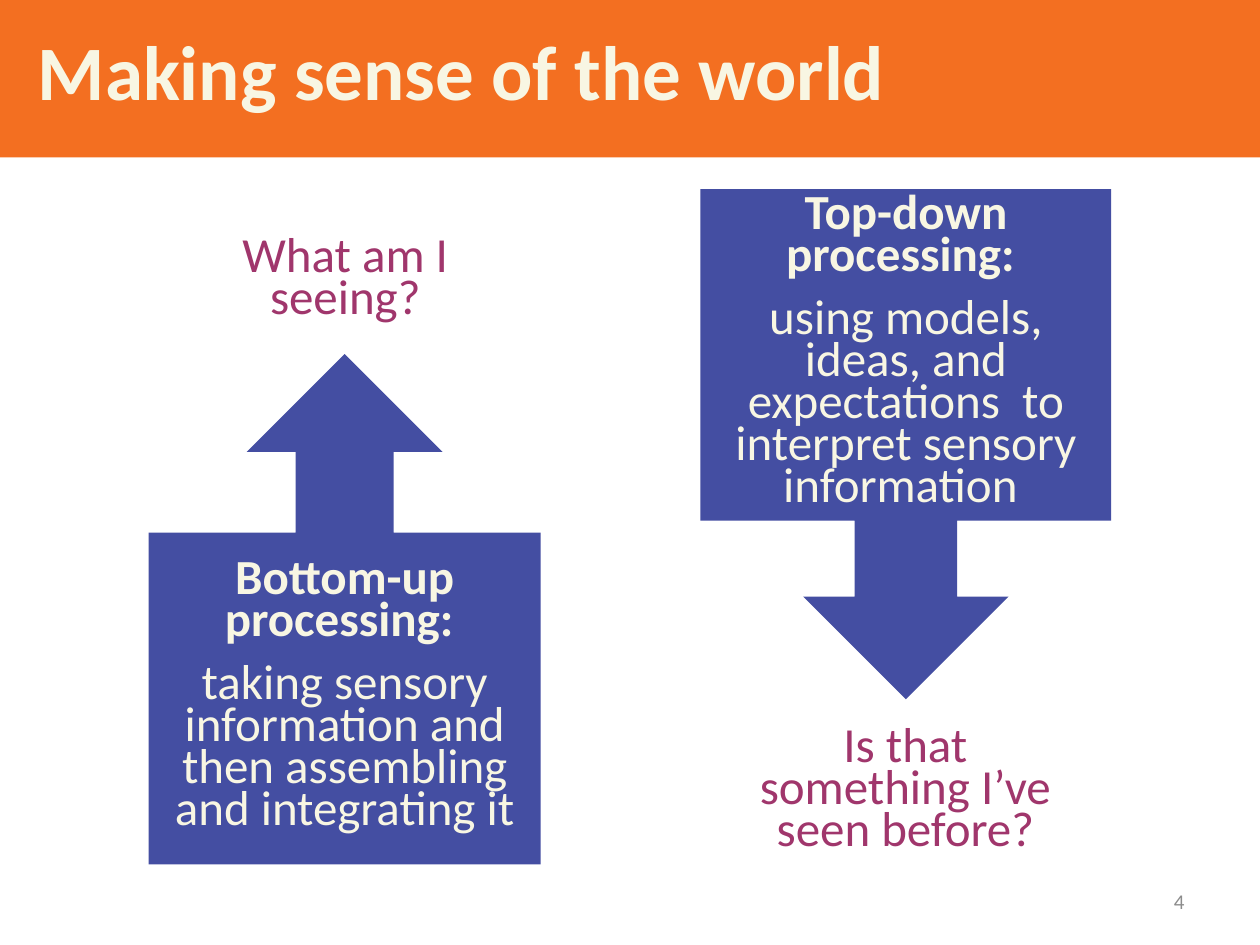
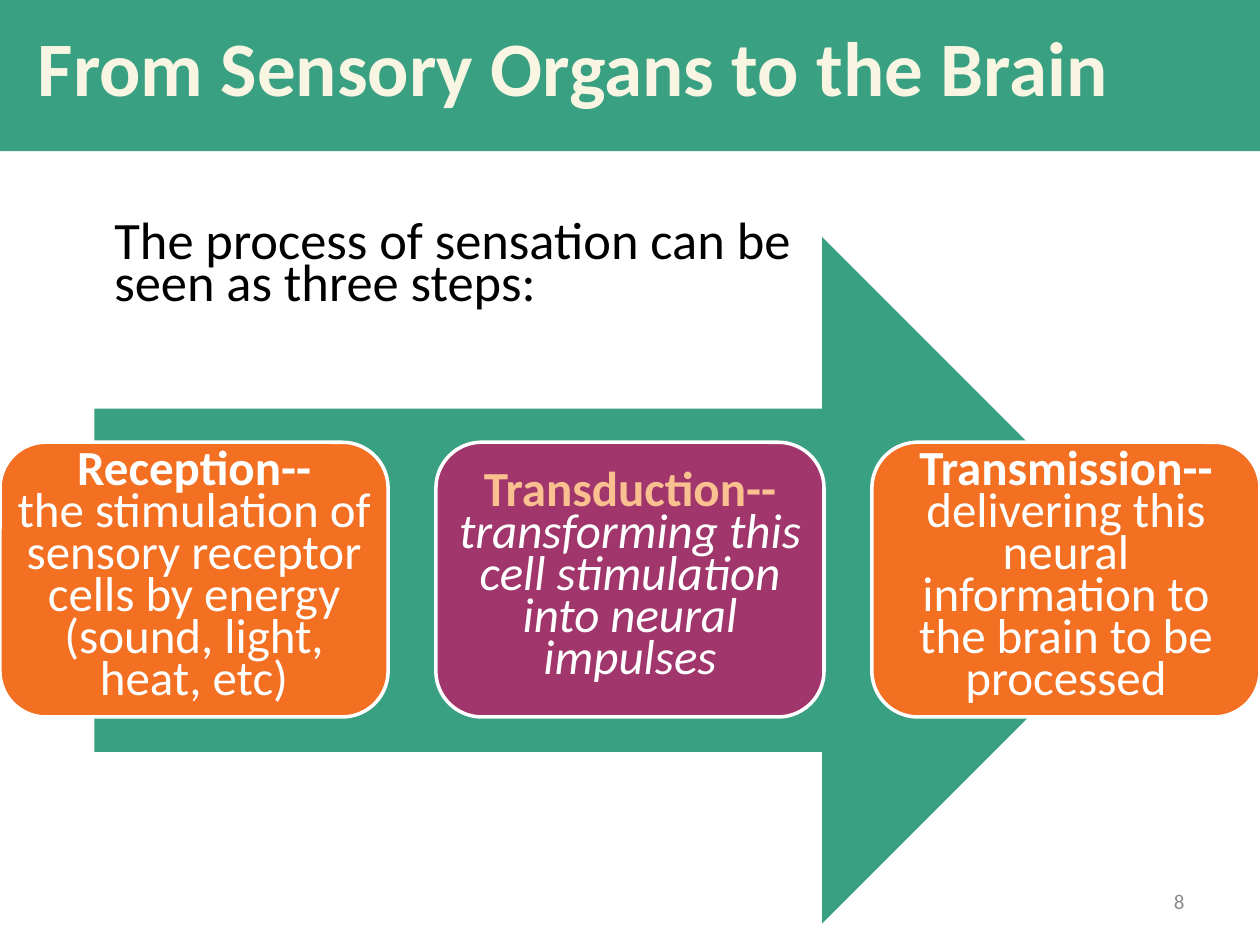
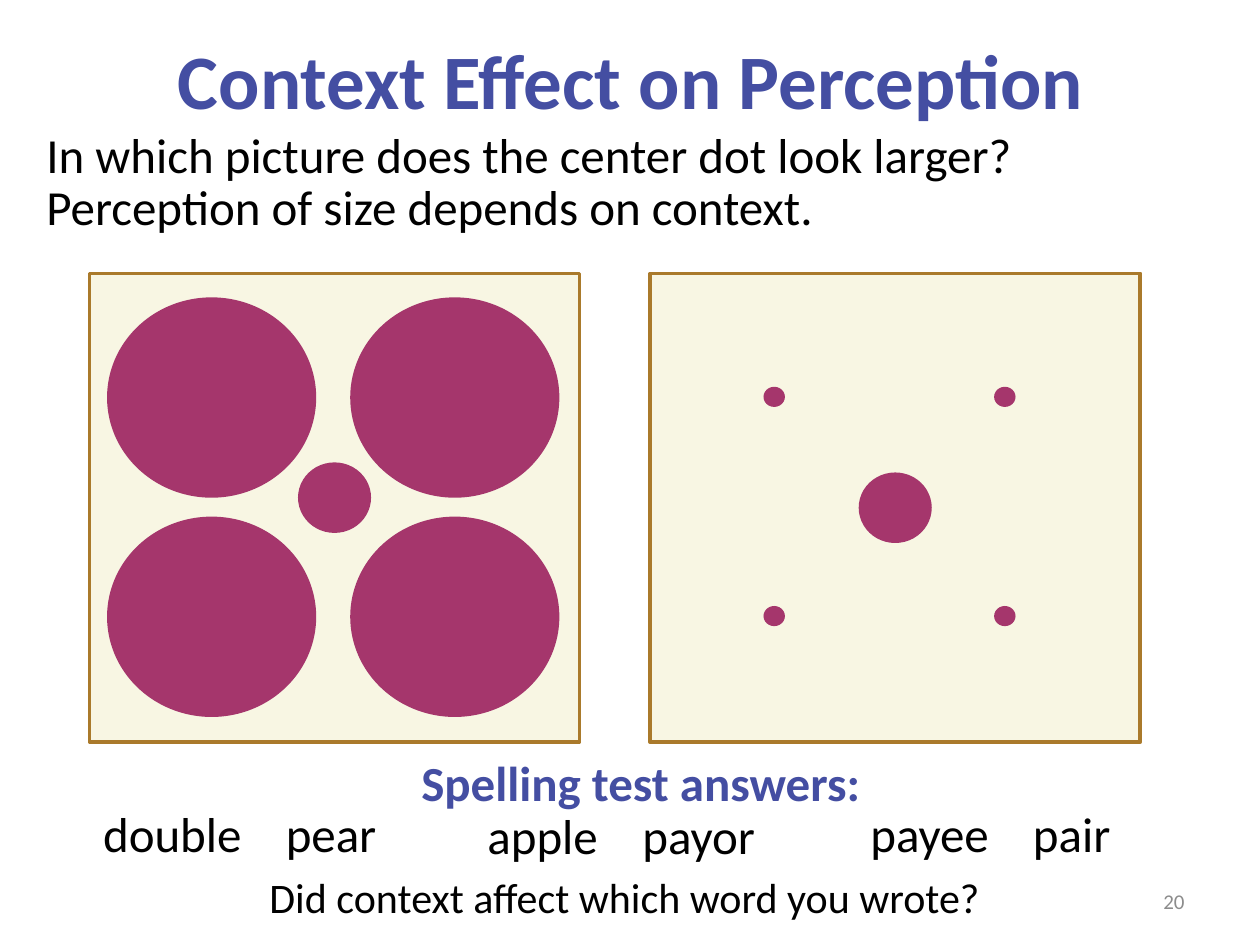
from dataclasses import dataclass, field
from itertools import product
from typing import NamedTuple, Optional

from lxml import etree
from pptx import Presentation
from pptx.dml.color import RGBColor
from pptx.enum import shapes, text
from pptx.oxml import ns
from pptx.util import Inches, Pt

FONT = "Calibri"
COLORS = {
    "cream": "F8F6E3",
    "white": "FFFFFF",
    "black": "000000",
    "orange": "F36F21",
    "green": "3AA082",
    "blue": "444EA2",
    "plum": "A0366C",
    "dot": "A5366C",
    "peach": "FAC090",
    "frame": "AA7A2B",
    "gray": "8C8C8C",
}
SHAPE = shapes.MSO_SHAPE
ALIGN = text.PP_ALIGN
ANCHOR = text.MSO_ANCHOR
TITLE_ONLY = 5

TIGHT = {"line_spacing": Pt(24)}
CENTERED = {**TIGHT, "alignment": ALIGN.CENTER}
SPACED = {**CENTERED, "space_after": Pt(12)}
BODY = {**TIGHT, "space_before": Pt(5.6)}


class Box(NamedTuple):
    left: float
    top: float
    width: float
    height: float


class Run(NamedTuple):
    text: str
    color: str = "black"
    size: float = 28
    bold: bool = False
    italic: bool = False


Paragraphs = list[list[Run]]


@dataclass
class Title:
    text: str
    box: Box
    color: str = "cream"
    band: Optional[str] = None
    style: dict = field(default_factory=dict)


@dataclass
class Callout:
    kind: SHAPE
    box: Box
    heading: str
    body: str
    question: str
    question_box: Box


@dataclass
class Step:
    fill: str
    paragraphs: Paragraphs


@dataclass
class DotPanel:
    left: float
    center_top: float
    dots: Box
    column_pitch: float


@dataclass
class WordPair:
    words: str
    box: Box
    tab: float


def rgb(name: str) -> RGBColor:
    return RGBColor.from_string(COLORS[name])


def apply(target, values: dict) -> None:
    for name, value in values.items():
        setattr(target, name, value)


def write(frame, paragraphs: Paragraphs, style: dict, **frame_values) -> None:
    """Fill a text frame, giving every paragraph the same style."""
    apply(frame, {"word_wrap": True, "auto_size": text.MSO_AUTO_SIZE.NONE, **frame_values})
    for index, runs in enumerate(paragraphs):
        paragraph = frame.add_paragraph() if index else frame.paragraphs[0]
        apply(paragraph, style)
        for item in runs:
            run = paragraph.add_run()
            run.text = item.text
            apply(run.font, {"name": FONT, "size": Pt(item.size),
                             "bold": item.bold, "italic": item.italic})
            run.font.color.rgb = rgb(item.color)


def add_text(slide, box: Box, paragraphs: Paragraphs, style: dict, **frame_values):
    shape = slide.shapes.add_textbox(*map(Inches, box))
    write(shape.text_frame, paragraphs, style, **frame_values)
    return shape


def add_figure(slide, kind: SHAPE, box: Box, fill: str, line: Optional[str] = None):
    shape = slide.shapes.add_shape(kind, *map(Inches, box))
    shape.shadow.inherit = False
    shape.fill.solid()
    shape.fill.fore_color.rgb = rgb(fill)
    if line:
        shape.line.color.rgb = rgb(line)
        shape.line.width = Pt(2)
    else:
        shape.line.fill.background()
    return shape


def add_slide(presentation, title: Title, number: int):
    """Add a slide with its title and page number."""
    slide = presentation.slides.add_slide(presentation.slide_layouts[TITLE_ONLY])
    placeholder = slide.shapes.title
    apply(placeholder, dict(zip(("left", "top", "width", "height"), map(Inches, title.box))))
    if title.band:
        placeholder.fill.solid()
        placeholder.fill.fore_color.rgb = rgb(title.band)
    write(placeholder.text_frame, [[Run(title.text, title.color, 44, bold=True)]],
          title.style, vertical_anchor=ANCHOR.MIDDLE,
          margin_left=Inches(0.3 if title.band else 0.1))
    add_text(slide, Box(7.17, 6.95, 2.33, 0.4), [[Run(str(number), "gray", 12)]],
             {"alignment": ALIGN.RIGHT}, vertical_anchor=ANCHOR.MIDDLE)
    return slide


BAND_STYLE = {"alignment": ALIGN.LEFT, "line_spacing": Pt(42)}

CALLOUTS = [
    Callout(SHAPE.UP_ARROW_CALLOUT, Box(1.18, 2.81, 3.11, 4.05),
            "Bottom-up processing: ",
            "taking sensory information and then assembling and integrating it",
            "What am I seeing?", Box(1.49, 1.86, 2.5, 0.79)),
    Callout(SHAPE.DOWN_ARROW_CALLOUT, Box(5.56, 1.5, 3.26, 4.05),
            "Top-down processing: ",
            "using models, ideas, and expectations  to interpret sensory information ",
            "Is that something I’ve seen before?", Box(5.79, 5.75, 2.79, 1.11)),
]

STEPS = [
    Step("orange", [
        [Run("Reception--", "white", bold=True)],
        [Run("the stimulation of sensory receptor cells by energy (sound, light, heat, etc)",
             "white")],
    ]),
    Step("plum", [[
        Run("Transduction-- ", "peach", bold=True),
        Run("transforming this cell stimulation into neural impulses", "white", italic=True),
    ]]),
    Step("orange", [[
        Run("Transmission--", "white", bold=True),
        Run("delivering this neural information to the brain to be processed", "white"),
    ]]),
]

PANEL_TOP, PANEL_WIDTH, PANEL_HEIGHT = 2.17, 3.89, 3.72
CENTER_WIDTH, CENTER_HEIGHT = 0.58, 0.56
DOT_ROW_PITCH = 1.74
DOT_PANELS = [
    DotPanel(0.71, 3.67, Box(0.85, 2.36, 1.66, 1.59), 1.93),
    DotPanel(5.16, 3.75, Box(6.06, 3.07, 0.17, 0.16), 1.83),
]

WORD_PAIRS = [
    WordPair("double\tpear", Box(0.72, 6.46, 2.84, 0.46), 1.45),
    WordPair("apple\tpayor", Box(3.77, 6.48, 2.79, 0.46), 1.23),
    WordPair("payee\tpair", Box(6.81, 6.46, 2.4, 0.46), 1.29),
]


def add_callout(slide, callout: Callout) -> None:
    add_text(slide, callout.question_box, [[Run(callout.question, "plum")]], SPACED)
    shape = add_figure(slide, callout.kind, callout.box, "blue")
    for index, value in enumerate((0.25, 0.25, 0.25, 0.65)):
        shape.adjustments[index] = value
    write(shape.text_frame,
          [[Run(callout.heading, "cream", bold=True)], [Run(callout.body, "cream")]],
          SPACED, vertical_anchor=ANCHOR.MIDDLE)


def add_dot_panel(slide, panel: DotPanel) -> None:
    add_figure(slide, SHAPE.RECTANGLE,
               Box(panel.left, PANEL_TOP, PANEL_WIDTH, PANEL_HEIGHT), "cream", "frame")
    center_left = panel.left + (PANEL_WIDTH - CENTER_WIDTH) / 2
    add_figure(slide, SHAPE.OVAL,
               Box(center_left, panel.center_top, CENTER_WIDTH, CENTER_HEIGHT), "dot")
    for row, column in product(range(2), repeat=2):
        dot = panel.dots._replace(left=panel.dots.left + column * panel.column_pitch,
                                  top=panel.dots.top + row * DOT_ROW_PITCH)
        add_figure(slide, SHAPE.OVAL, dot, "dot")


def add_word_pair(slide, pair: WordPair) -> None:
    """Write two words, the second one at a tab stop."""
    shape = add_text(slide, pair.box, [[Run(pair.words)]], BODY)
    properties = shape.text_frame.paragraphs[0]._p.get_or_add_pPr()
    tabs = etree.SubElement(properties, ns.qn("a:tabLst"))
    etree.SubElement(tabs, ns.qn("a:tab"), pos=str(Inches(pair.tab)), algn="l")


def build_processing_slide(presentation) -> None:
    title = Title("Making sense of the world", Box(0, 0, 10, 1.25),
                  band="orange", style=BAND_STYLE)
    slide = add_slide(presentation, title, 4)
    for callout in CALLOUTS:
        add_callout(slide, callout)


def build_steps_slide(presentation) -> None:
    title = Title("From Sensory Organs to the Brain", Box(0, 0, 10, 1.2),
                  band="green", style=BAND_STYLE)
    slide = add_slide(presentation, title, 8)
    add_text(slide, Box(0.81, 1.76, 5.57, 1.4),
             [[Run("The process of sensation can be seen as three steps:", size=30)]], BODY)
    add_figure(slide, SHAPE.RIGHT_ARROW, Box(0.75, 1.88, 8.5, 5.45), "green")
    margins = {f"margin_{side}": Inches(0.01) for side in ("left", "right", "top", "bottom")}
    for index, step in enumerate(STEPS):
        shape = add_figure(slide, SHAPE.ROUNDED_RECTANGLE,
                           Box(index * 3.46, 3.51, 3.08, 2.18), step.fill, "white")
        write(shape.text_frame, step.paragraphs, CENTERED,
              vertical_anchor=ANCHOR.MIDDLE, **margins)


def build_context_slide(presentation) -> None:
    title = Title("Context Effect on Perception", Box(0.51, 0, 9, 1.25), "blue",
                  style={"alignment": ALIGN.CENTER})
    slide = add_slide(presentation, title, 20)
    add_text(slide, Box(0.28, 6.06, 9.61, 0.5),
             [[Run("Spelling test answers:", "blue", bold=True)]],
             {**BODY, "alignment": ALIGN.CENTER})
    add_text(slide, Box(0.27, 1.07, 9.44, 0.87),
             [[Run("In which picture does the center dot look larger?")],
              [Run("Perception of size depends on context.")]], BODY)
    for panel in DOT_PANELS:
        add_dot_panel(slide, panel)
    add_text(slide, Box(2.04, 6.87, 5.9, 0.51),
             [[Run("Did context affect which word you wrote?", size=24)]], {})
    for pair in WORD_PAIRS:
        add_word_pair(slide, pair)


def main() -> None:
    presentation = Presentation()
    presentation.slide_width = Inches(10)
    presentation.slide_height = Inches(7.5)
    build_processing_slide(presentation)
    build_steps_slide(presentation)
    build_context_slide(presentation)
    presentation.save("out.pptx")


if __name__ == "__main__":
    main()
